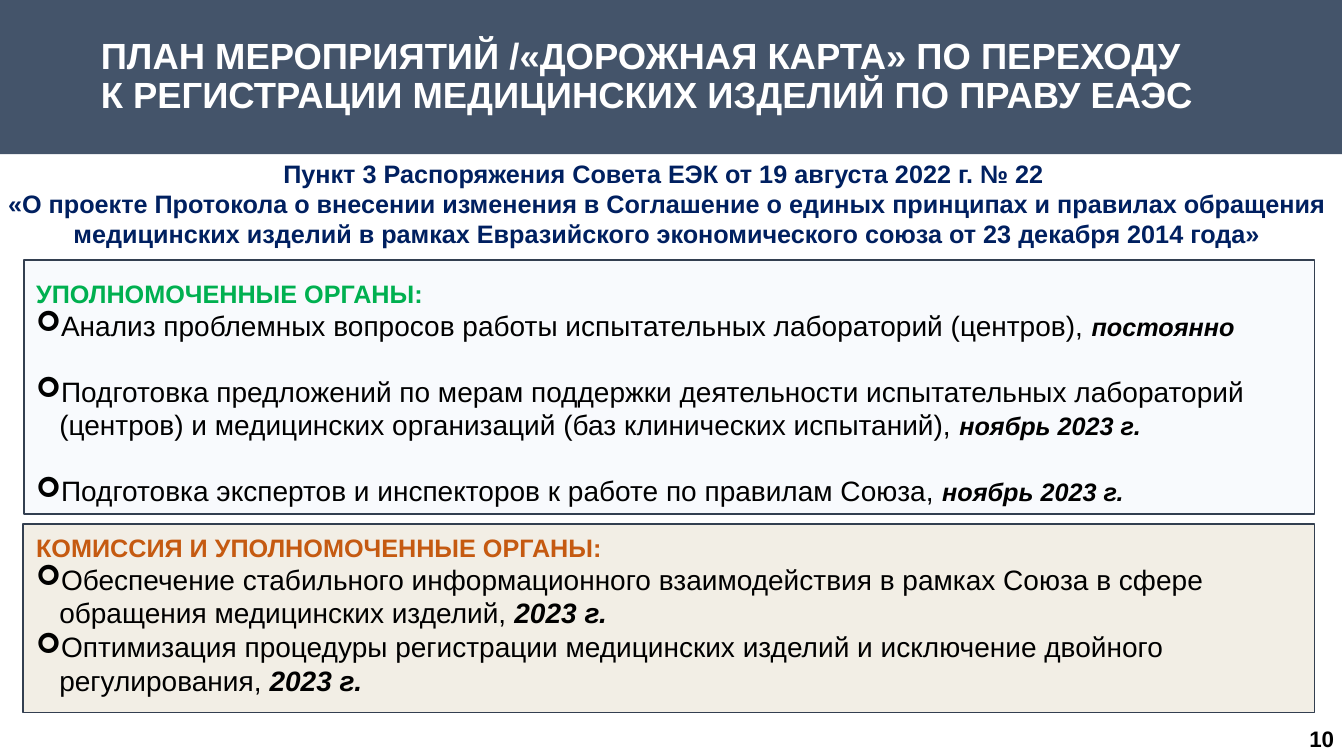
import pptx
import pptx.util
import pptx.dml.color
import pptx.enum.shapes
import pptx.enum.text
import pptx.oxml.ns
import lxml.etree

Inches = pptx.util.Inches
Pt = pptx.util.Pt
ALIGN = pptx.enum.text.PP_ALIGN
ANCHOR = pptx.enum.text.MSO_ANCHOR


def colour(hex_text):
    return pptx.dml.color.RGBColor.from_string(hex_text)


def write(para, text, size=18, color="000000", bold=False, italic=False):
    """Append text to a paragraph, with a line break at each newline."""
    for index, line in enumerate(text.split("\n")):
        if index:
            para.add_line_break()
        span = para.add_run()
        span.text = line
        span.font.name = "Arial"
        span.font.size = Pt(size)
        span.font.color.rgb = colour(color)
        span.font.bold = bold
        span.font.italic = italic


deck = pptx.Presentation()
deck.slide_width, deck.slide_height = Inches(13.33), Inches(7.5)
page = deck.slides.add_slide(deck.slide_layouts[5])

# Title band
title = page.shapes.title
title.left, title.top = Inches(0), Inches(0)
title.width, title.height = Inches(13.31), Inches(1.53)
title.fill.solid()
title.fill.fore_color.rgb = colour("44546A")
frame = title.text_frame
frame.auto_size = pptx.enum.text.MSO_AUTO_SIZE.NONE
frame.vertical_anchor = ANCHOR.MIDDLE
frame.margin_left = Inches(1)
para = frame.paragraphs[0]
para.alignment = ALIGN.LEFT
para.line_spacing = 0.9
write(para, "ПЛАН МЕРОПРИЯТИЙ /«ДОРОЖНАЯ КАРТА» ПО ПЕРЕХОДУ\n"
      "К РЕГИСТРАЦИИ МЕДИЦИНСКИХ ИЗДЕЛИЙ ПО ПРАВУ ЕАЭС",
      size=26, color="FFFFFF", bold=True)

# Tinted panels behind the two sections
panels = [
    (0.23, 5.2, 12.81, 1.87, "806000"),
    (0.24, 2.58, 12.8, 2.52, "BDD7EE"),
]
for left, top, width, height, tint in panels:
    panel = page.shapes.add_shape(
        pptx.enum.shapes.MSO_SHAPE.RECTANGLE,
        Inches(left), Inches(top), Inches(width), Inches(height))
    panel.shadow.inherit = False
    panel.fill.solid()
    panel.fill.fore_color.rgb = colour(tint)
    tint_element = panel.fill._xPr.find(".//" + pptx.oxml.ns.qn("a:srgbClr"))
    lxml.etree.SubElement(tint_element, pptx.oxml.ns.qn("a:alpha"), val="10000")
    panel.line.color.rgb = colour("333F50")
    panel.line.width = Pt(1)

# Reference to the decree, and the page number
labels = [
    (0, 1.45, 13.23, 1.14, ALIGN.CENTER, 18, "002060",
     "Пункт 3 Распоряжения Совета ЕЭК от 19 августа 2022 г. № 22 \n"
     "«О проекте Протокола о внесении изменения в Соглашение о единых принципах "
     "и правилах обращения медицинских изделий в рамках Евразийского "
     "экономического союза от 23 декабря 2014 года»"),
    (12.54, 7.16, 0.79, 0.34, ALIGN.RIGHT, 16, "000000", "10"),
]
for left, top, width, height, align, size, color, text in labels:
    box = page.shapes.add_textbox(Inches(left), Inches(top), Inches(width), Inches(height))
    frame = box.text_frame
    frame.word_wrap = True
    frame.vertical_anchor = ANCHOR.MIDDLE
    if align == ALIGN.CENTER:
        frame.margin_left = frame.margin_right = Inches(0.07)
        frame.margin_top = frame.margin_bottom = Inches(0.04)
    para = frame.paragraphs[0]
    para.alignment = align
    write(para, text, size=size, color=color, bold=True)

# Sections: heading, colour, space before, deadline size, gap between tasks, tasks
sections = [
    ("УПОЛНОМОЧЕННЫЕ ОРГАНЫ:", "00B050", 0, 18, 23, [
        ("Анализ проблемных вопросов работы испытательных лабораторий (центров), ",
         "постоянно"),
        ("Подготовка предложений по мерам поддержки деятельности испытательных "
         "лабораторий (центров) и медицинских организаций (баз клинических испытаний), ",
         "ноябрь 2023 г."),
        ("Подготовка экспертов и инспекторов к работе по правилам Союза, ",
         "ноябрь 2023 г."),
    ]),
    ("КОМИССИЯ И УПОЛНОМОЧЕННЫЕ ОРГАНЫ:", "C55A11", 17.8, 20, 0, [
        ("Обеспечение стабильного информационного взаимодействия в рамках Союза "
         "в сфере обращения медицинских изделий, ", "2023 г."),
        ("Оптимизация процедуры регистрации медицинских изделий и исключение "
         "двойного регулирования, ", "2023 г."),
    ]),
]
plan = page.shapes.add_textbox(Inches(0.26), Inches(2.71), Inches(12.67), Inches(4.35))
frame = plan.text_frame
frame.word_wrap = True
para = frame.paragraphs[0]
for heading, color, space, deadline_size, gap, tasks in sections:
    if space:
        para = frame.add_paragraph()
        para.space_before = Pt(space)
    write(para, heading, color=color, bold=True)
    for index, (task, deadline) in enumerate(tasks):
        para = frame.add_paragraph()
        properties = para._p.get_or_add_pPr()
        properties.set("marL", str(Inches(0.23)))
        properties.set("indent", str(-Inches(0.23)))
        lxml.etree.SubElement(properties, pptx.oxml.ns.qn("a:buFont"), typeface="Wingdings")
        lxml.etree.SubElement(properties, pptx.oxml.ns.qn("a:buChar"), char="➢")
        if index and gap:
            para.space_before = Pt(gap)
        write(para, task, size=20)
        write(para, deadline, size=deadline_size, bold=True, italic=True)

deck.save("out.pptx")
